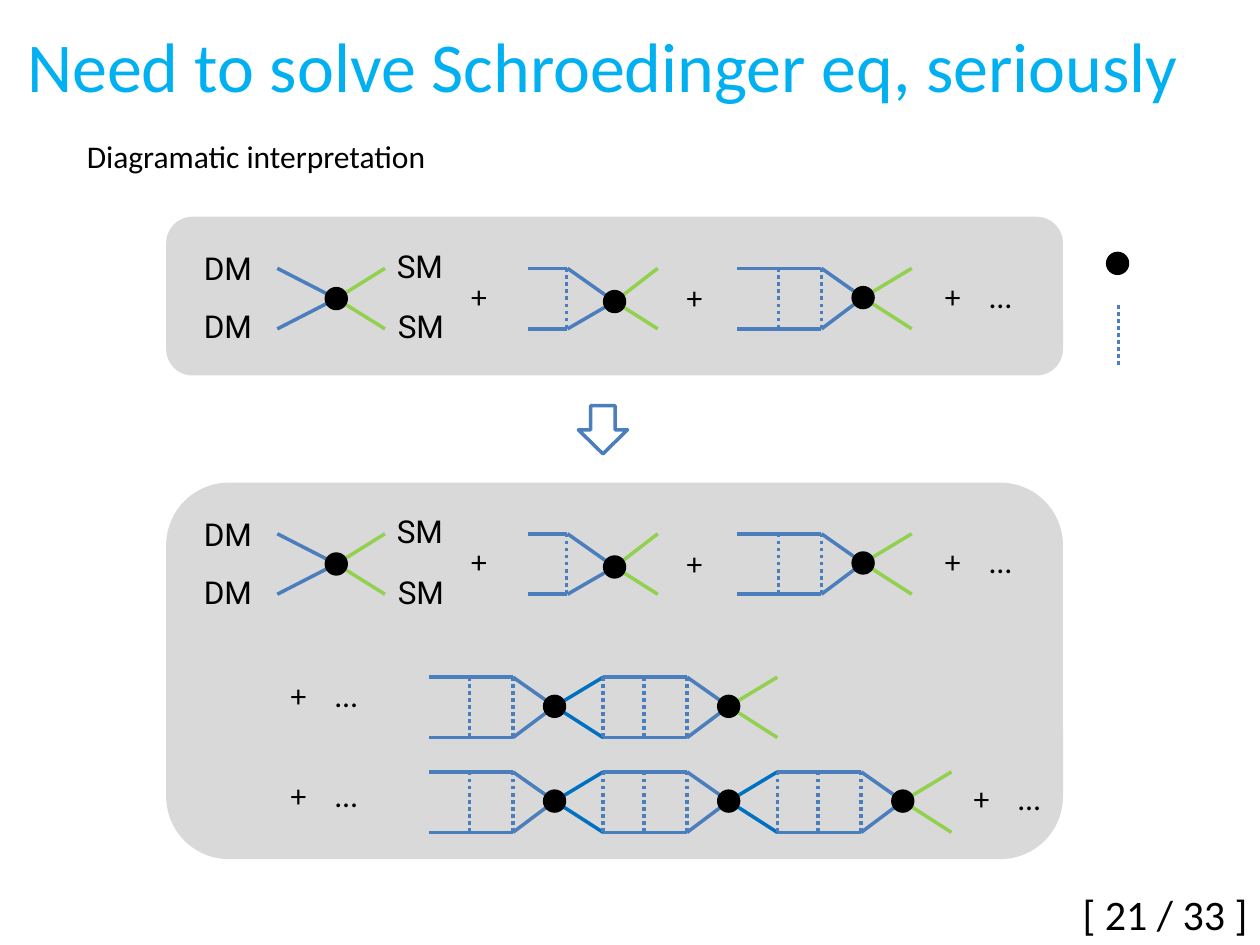
import pptx
import pptx.util
import pptx.dml.color
import pptx.enum.dml
import pptx.enum.shapes
import pptx.enum.text
import pptx.oxml.ns
from lxml import etree

Cm = pptx.util.Cm
Pt = pptx.util.Pt
RGB = pptx.dml.color.RGBColor
SHAPE = pptx.enum.shapes.MSO_SHAPE
ALIGN = pptx.enum.text.PP_ALIGN
ANCHOR = pptx.enum.text.MSO_ANCHOR
qn = pptx.oxml.ns.qn

BLACK = RGB(0x00, 0x00, 0x00)
GRAY = RGB(0xD9, 0xD9, 0xD9)
BLUE = RGB(0x4B, 0x7E, 0xBC)
DEEP = RGB(0x00, 0x70, 0xC0)
GREEN = RGB(0x92, 0xD0, 0x50)
CYAN = RGB(0x00, 0xB0, 0xF0)

# Content, all lengths in cm
TITLE = "Need to solve Schroedinger eq, seriously"
NOTE = "Diagramatic interpretation"
PAGE = "[ 21 / 33 ]"
MORE = "+\t…"

PANELS = [(4.37, 3.2), (9.73, 7.59)]  # top, height
SHIFTS = [0, 5.35]  # the first row is repeated in the second panel
PITCH = 3.51
HALF = 0.61  # half the height of a graph

# Offsets from the vertex: bend and end of rails, rungs, outgoing legs, dip
BARE = dict(bend=1.19, end=1.19, rungs=[], out=0.98, dip=0)
SINGLE = dict(bend=0.95, end=1.75, rungs=[0.97], out=0.87, dip=0.06)
LADDER = dict(bend=0.84, end=2.54, rungs=[0.84, 1.71], out=0.98, dip=-0.02)

GRAPHS = [(6.78, BARE), (12.39, SINGLE), (17.4, LADDER)]  # vertex x, kind
CHAINS = [(14.26, 2), (16.17, 3)]  # middle y, number of vertices
LABELS = [  # words, left, top, width, font
    ("DM", 3.86, 4.9, 1.63, "Roboto"),
    ("DM", 3.86, 6.07, 1.63, "Roboto"),
    ("SM", 7.75, 4.85, 1.52, "Roboto"),
    ("SM", 7.77, 6.07, 1.52, "Roboto"),
    ("+", 9.25, 5.46, 1.04, "Calibri"),
    ("+", 13.59, 5.49, 1.04, "Calibri"),
    (MORE, 18.8, 5.46, 2.36, "Calibri"),
]
REST = [(5.61, 13.51), (5.61, 15.52), (19.38, 15.57)]  # left, top

deck = pptx.Presentation()
deck.slide_width, deck.slide_height = Cm(25.4), Cm(19.05)
slide = deck.slides.add_slide(deck.slide_layouts[6])


def text(words, x, y, w, h=1.02, size=18, font="Calibri", color=BLACK,
         align=ALIGN.LEFT, anchor=ANCHOR.TOP, wrap=True):
    frame = slide.shapes.add_textbox(Cm(x), Cm(y), Cm(w), Cm(h)).text_frame
    frame.word_wrap = wrap
    frame.vertical_anchor = anchor
    par = frame.paragraphs[0]
    par.text = words
    par.alignment = align
    if "\t" in words:
        tabs = etree.SubElement(par._p.get_or_add_pPr(), qn("a:tabLst"))
        etree.SubElement(tabs, qn("a:tab"), pos=str(Cm(0.9)), algn="l")
    par.font.size = Pt(size)
    par.font.name = font
    par.font.color.rgb = color


def shape(kind, x, y, w, h, fill=None, edge=None):
    item = slide.shapes.add_shape(kind, Cm(x), Cm(y), Cm(w), Cm(h))
    item.shadow.inherit = False
    if fill is None:
        item.fill.background()
    else:
        item.fill.solid()
        item.fill.fore_color.rgb = fill
    if edge is None:
        item.line.fill.background()
    else:
        item.line.color.rgb = edge
        item.line.width = Pt(2)


def line(x1, y1, x2, y2, color=BLUE, dots=False):
    item = slide.shapes.add_connector(
        pptx.enum.shapes.MSO_CONNECTOR.STRAIGHT, Cm(x1), Cm(y1), Cm(x2), Cm(y2))
    item.line.color.rgb = color
    item.line.width = Pt(2)
    if dots:
        item.line.dash_style = pptx.enum.dml.MSO_LINE.ROUND_DOT
    etree.SubElement(item._element.spPr, qn("a:effectLst"))


def rung(x, y):
    line(x, y - HALF, x, y + HALF, dots=True)


def dot(x, y):
    shape(SHAPE.OVAL, x - 0.2, y - 0.2, 0.4, 0.4, BLACK, BLACK)


def graph(x, y, bend, end, rungs, out, dip, color=GREEN):
    for back in rungs:
        rung(x - back, y)
    for side in (y - HALF, y + HALF):
        line(x, y + dip, x + out, side, color)
        line(x, y + dip, x - bend, side)
        if end > bend:
            line(x - bend, side, x - end, side)
    dot(x, y + dip)


# Heading
text(TITLE, 0.3, 0.33, 25.1, 1.96, size=40, color=CYAN)
text(NOTE, 1.5, 2.64, 7.42, wrap=False)

# Panels, each with the same first row
for (top, high), shift in zip(PANELS, SHIFTS):
    shape(SHAPE.ROUNDED_RECTANGLE, 3.35, top, 18.08, high, GRAY)
    for x, kind in GRAPHS:
        graph(x, 6.02 + shift, **kind)
    for words, x, y, w, font in LABELS:
        text(words, x, y + shift, w, font=font, wrap=words == MORE)

# Chains of ladders
for y, count in CHAINS:
    for i in range(count):
        x = 11.18 + i * PITCH
        last = i == count - 1
        graph(x, y, color=GREEN if last else DEEP, **LADDER)
        if not last:
            rung(x + LADDER["out"], y)
for x, y in REST:
    text(MORE, x, y, 2.36)

# Arrow, key and page number
shape(SHAPE.DOWN_ARROW, 11.66, 8.18, 0.99, 0.97, edge=BLUE)
dot(22.53, 5.31)
rung(22.55, 6.76)
text(PAGE, 19.48, 17.91, 5.92, size=24, align=ALIGN.RIGHT, anchor=ANCHOR.MIDDLE)

deck.save("out.pptx")
